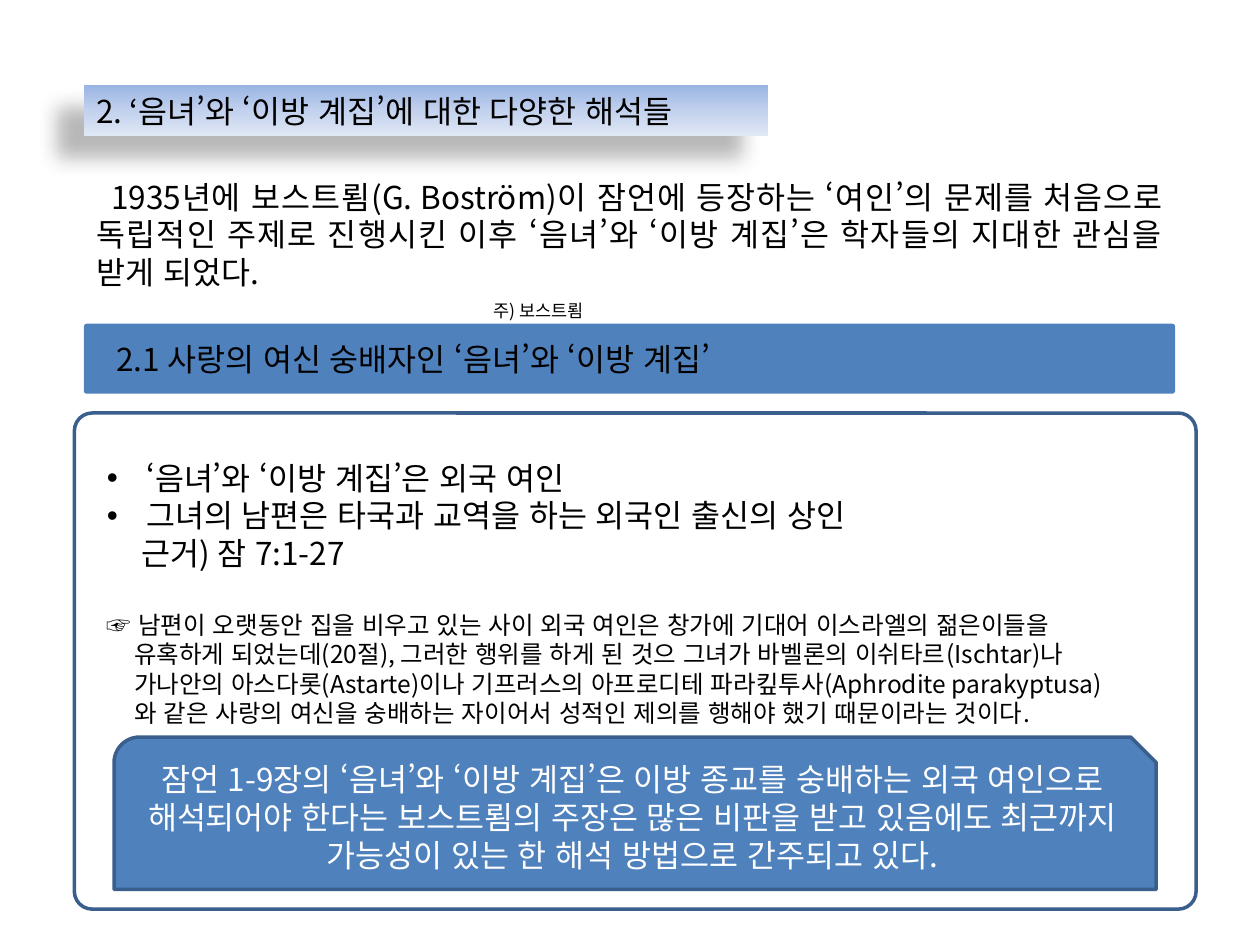
import copy

import pptx
import pptx.dml.color
import pptx.enum.lang
import pptx.enum.shapes
import pptx.enum.text
import pptx.oxml.ns
import pptx.util
from lxml import etree

Pt = pptx.util.Pt
SHAPES = pptx.enum.shapes.MSO_SHAPE
ALIGN = pptx.enum.text.PP_ALIGN
KOREAN = pptx.enum.lang.MSO_LANGUAGE_ID.KOREAN
qn = pptx.oxml.ns.qn

FONT = "Noto Sans CJK KR"
COLORS = {
    "text": "000000",
    "light": "FFFFFF",
    "blue": "4F81BD",
    "border": "3A5F8C",
    "shadow": "000000",
}
TITLE_GRADIENT = ["9AB5E4", "C2D1ED", "E1E8F5"]


def rgb(value):
    return pptx.dml.color.RGBColor.from_string(value)


def write_paragraph(paragraph, text, size=18, color="text", align=None,
                    left=0, first=0, bullet=None, before=0):
    """Fill one paragraph; left and first are its indents in points."""
    run = paragraph.add_run()
    run.text = text
    run.font.language_id = KOREAN  # gives narrow Korean quotation marks
    properties = paragraph._p.get_or_add_pPr()
    properties.set("marL", str(Pt(left)))
    properties.set("indent", str(Pt(first)))
    if bullet:
        etree.SubElement(properties, qn("a:buFont"), typeface="Arial")
        etree.SubElement(properties, qn("a:buChar"), char=bullet)
    if align is not None:
        paragraph.alignment = align
    if before:
        paragraph.space_before = Pt(before)
    font = paragraph.font
    font.size = Pt(size)
    font.color.rgb = rgb(COLORS[color])
    font.name = FONT
    etree.SubElement(properties.find(qn("a:defRPr")), qn("a:ea"), typeface=FONT)


def add_text(slide, box, paragraphs):
    """Add a text box from (text, options) pairs."""
    frame = slide.shapes.add_textbox(*map(Pt, box)).text_frame
    frame.word_wrap = True
    frame.auto_size = pptx.enum.text.MSO_AUTO_SIZE.SHAPE_TO_FIT_TEXT
    for index, (text, options) in enumerate(paragraphs):
        paragraph = frame.add_paragraph() if index else frame.paragraphs[0]
        write_paragraph(paragraph, text, **options)


def add_panel(slide, kind, box, fill=None, border=None, corner=None):
    panel = slide.shapes.add_shape(kind, *map(Pt, box))
    panel.shadow.inherit = False
    if corner is not None:
        panel.adjustments[0] = corner
    if fill:
        panel.fill.solid()
        panel.fill.fore_color.rgb = rgb(COLORS[fill])
    else:
        panel.fill.background()
    if border:
        panel.line.color.rgb = rgb(COLORS[border])
        panel.line.width = Pt(2)
    else:
        panel.line.fill.background()
    return panel


def add_title_bar(slide, box, text):
    bar = add_panel(slide, SHAPES.RECTANGLE, box)
    # Three-stop vertical gradient
    bar.fill.gradient()
    bar.fill.gradient_angle = 270
    stop_list = bar._element.spPr.find(qn("a:gradFill")).find(qn("a:gsLst"))
    stop_list.insert(1, copy.deepcopy(stop_list[0]))
    for index, (stop, color) in enumerate(zip(bar.fill.gradient_stops, TITLE_GRADIENT)):
        stop.position = index / 2
        stop.color.rgb = rgb(color)
    # Soft shadow towards the lower left
    effects = bar._element.spPr.find(qn("a:effectLst"))
    shadow = etree.SubElement(
        effects, qn("a:outerShdw"), blurRad=str(Pt(11.8)), dist=str(Pt(19.7)),
        dir=str(141 * 60000), algn="ctr", rotWithShape="0")
    tint = etree.SubElement(shadow, qn("a:srgbClr"), val=COLORS["shadow"])
    etree.SubElement(tint, qn("a:alpha"), val="28000")
    bar.text_frame.word_wrap = True
    bar.text_frame.vertical_anchor = pptx.enum.text.MSO_ANCHOR.TOP
    write_paragraph(bar.text_frame.paragraphs[0], text, align=ALIGN.LEFT)


def main():
    presentation = pptx.Presentation()
    presentation.slide_width, presentation.slide_height = Pt(720), Pt(540)
    slide = presentation.slides.add_slide(presentation.slide_layouts[6])

    # Introduction and title
    add_text(slide, (48, 98, 623.5, 72.7), [
        ("1935년에 보스트룀(G. Boström)이 잠언에 등장하는 ‘여인’의 문제를 처음으로 "
         "독립적인 주제로 진행시킨 이후 ‘음녀’와 ‘이방 계집’은 학자들의 지대한 관심을 "
         "받게 되었다.", {"align": ALIGN.JUSTIFY, "first": 8.5})])
    add_title_bar(slide, (48, 48.8, 391, 29),
                  "2. ‘음녀’와 ‘이방 계집’에 대한 다양한 해석들")

    # Argument frame
    add_panel(slide, SHAPES.ROUNDED_RECTANGLE, (42.5, 236, 641, 283.5),
              border="border", corner=0.036)
    bulleted = {"left": 22.5, "first": -22.5, "bullet": "•"}
    note = {"size": 14}
    note_rest = {"size": 14, "left": 15.6}
    add_text(slide, (54, 258.5, 618, 162.7), [
        ("‘음녀’와 ‘이방 계집’은 외국 여인", bulleted),
        ("그녀의 남편은 타국과 교역을 하는 외국인 출신의 상인", bulleted),
        ("근거) 잠 7:1-27", {"left": 20}),
        ("☞ 남편이 오랫동안 집을 비우고 있는 사이 외국 여인은 창가에 기대어 "
         "이스라엘의 젊은이들을", {**note, "before": 21.6}),
        ("유혹하게 되었는데(20절), 그러한 행위를 하게 된 것으 그녀가 바벨론의 "
         "이쉬타르(Ischtar)나", note_rest),
        ("가나안의 아스다롯(Astarte)이나 기프러스의 아프로디테 "
         "파라킾투사(Aphrodite parakyptusa)", note_rest),
        ("와 같은 사랑의 여신을 숭배하는 자이어서 성적인 제의를 행해야 했기 "
         "때문이라는 것이다.", note_rest),
    ])

    # Conclusion
    conclusion = add_panel(slide, SHAPES.SNIP_ROUND_RECTANGLE, (65.2, 421.2, 595.5, 87),
                           fill="blue", border="border")
    conclusion.text_frame.word_wrap = True
    conclusion.text_frame.vertical_anchor = pptx.enum.text.MSO_ANCHOR.MIDDLE
    write_paragraph(
        conclusion.text_frame.paragraphs[0],
        "잠언 1-9장의 ‘음녀’와 ‘이방 계집’은 이방 종교를 숭배하는 외국 여인으로 "
        "해석되어야 한다는 보스트룀의 주장은 많은 비판을 받고 있음에도 최근까지 "
        "가능성이 있는 한 해석 방법으로 간주되고 있다.",
        color="light", align=ALIGN.CENTER)

    # Section heading and footnote
    add_panel(slide, SHAPES.ROUNDED_RECTANGLE, (48, 185, 623.5, 40),
              fill="blue", corner=0.041)
    add_text(slide, (59.5, 190.8, 584, 29),
             [("2.1 사랑의 여신 숭배자인 ‘음녀’와 ‘이방 계집’", {})])
    add_text(slide, (275, 167.8, 419, 19.4), [("주) 보스트룀", {"size": 10})])

    presentation.save("out.pptx")


if __name__ == "__main__":
    main()
